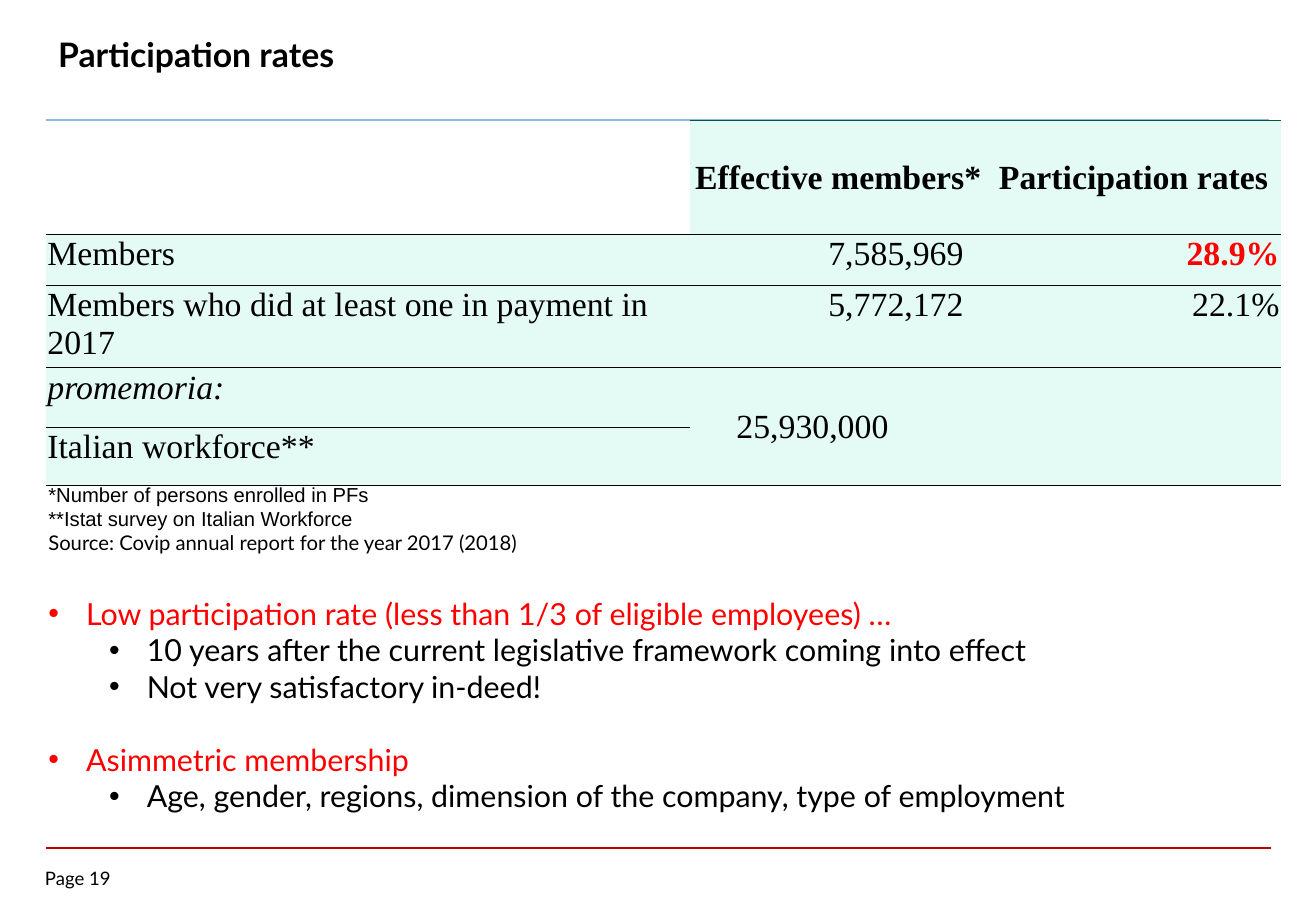
from typing import NamedTuple

import lxml.etree
import pptx
import pptx.dml.color
import pptx.enum.shapes
import pptx.enum.text
import pptx.oxml.ns
import pptx.util

Inches = pptx.util.Inches
Pt = pptx.util.Pt
Align = pptx.enum.text.PP_ALIGN
Anchor = pptx.enum.text.MSO_ANCHOR
qn = pptx.oxml.ns.qn

BLACK, RED, MINT = "000000", "FF0000", "E4FAF4"
LATO, TIMES = "Lato", "Times New Roman"
PLAIN = "{2D5ABB26-0587-4C30-8999-92F81FD0307C}"


class Rule(NamedTuple):
    top: float
    end: float
    color: str
    width: float


class Item(NamedTuple):
    text: str
    level: int = 0
    gap: float = 0


class Cell(NamedTuple):
    row: int
    col: int
    text: str
    align: Align = Align.LEFT
    anchor: Anchor = Anchor.TOP
    left: float = 0.01
    right: float = 0.01
    color: str = BLACK
    bold: bool = False
    italic: bool = False


RULES = [Rule(6.98, 10.46, "C00000", 1), Rule(0.99, 10.44, "8EB4E3", 1.5)]

HEAD = dict(align=Align.CENTER, anchor=Anchor.MIDDLE, bold=True)
COUNT = dict(align=Align.RIGHT, right=0.19)
CELLS = [
    Cell(0, 1, "Effective members*", **HEAD),
    Cell(0, 2, "Participation rates", **HEAD),
    Cell(1, 0, "Members"),
    Cell(1, 1, "7,585,969", **COUNT),
    Cell(1, 2, "28.9%", Align.RIGHT, color=RED, bold=True),
    Cell(2, 0, "Members who did at least one in payment in 2017"),
    Cell(2, 1, "5,772,172", **COUNT),
    Cell(2, 2, "22.1%", Align.RIGHT),
    Cell(3, 0, "promemoria:", italic=True),
    Cell(3, 1, "25,930,000", anchor=Anchor.MIDDLE, left=0.38),
    Cell(4, 0, "Italian workforce**"),
]

NOTES = [
    ("*Number of persons enrolled in PFs", "Arial"),
    ("**Istat survey on Italian Workforce", "Arial"),
    ("Source: Covip annual report for the year 2017 (2018)", LATO),
]

ITEMS = [
    Item("Low participation rate (less than 1/3 of eligible employees) …"),
    Item("10 years after the current legislative framework coming into effect", 1),
    Item("Not very satisfactory in-deed!", 1),
    Item("Asimmetric membership", gap=21.6),
    Item("Age, gender, regions, dimension of the company, type of employment", 1),
]


def rgb(color: str) -> pptx.dml.color.RGBColor:
    return pptx.dml.color.RGBColor.from_string(color)


def write(frame, text: str, *, size: float, font: str = LATO, color: str = BLACK,
          bold: bool = False, italic: bool = False, align: Align = Align.LEFT,
          gap: float = 0, level: int = 0, bullet: bool = False) -> None:
    para = frame.paragraphs[0]
    if para.runs:
        para = frame.add_paragraph()
    para.alignment = align
    para.level = level
    if gap:
        para.space_before = Pt(gap)
    if bullet:
        props = para._p.get_or_add_pPr()
        props.set("marL", str(Inches(0.31 + 0.5 * level)))
        props.set("indent", str(Inches(-0.31)))
        lxml.etree.SubElement(props, qn("a:buFont"), typeface="Arial")
        lxml.etree.SubElement(props, qn("a:buChar"), char="•")
    run = para.add_run()
    run.text = text
    face = run.font
    face.name, face.size = font, Pt(size)
    face.bold, face.italic = bold, italic
    face.color.rgb = rgb(color)


def add_box(slide, left: float, top: float, width: float, height: float,
            anchor: Anchor = Anchor.TOP):
    box = slide.shapes.add_textbox(*map(Inches, (left, top, width, height)))
    frame = box.text_frame
    frame.word_wrap = True
    frame.vertical_anchor = anchor
    return frame


def add_rule(slide, rule: Rule) -> None:
    line = slide.shapes.add_connector(
        pptx.enum.shapes.MSO_CONNECTOR.STRAIGHT,
        Inches(0.38), Inches(rule.top), Inches(rule.end), Inches(rule.top))
    line.line.color.rgb = rgb(rule.color)
    line.line.width = Pt(rule.width)
    lxml.etree.SubElement(line._element.spPr, qn("a:effectLst"))


def add_edges(cell, edges: dict[str, str]) -> None:
    props = cell._tc.get_or_add_tcPr()
    for spot, (side, color) in enumerate(edges.items()):
        line = lxml.etree.Element(qn(f"a:ln{side}"), w=str(Pt(0.5)))
        fill = lxml.etree.SubElement(line, qn("a:solidFill"))
        lxml.etree.SubElement(fill, qn("a:srgbClr"), val=color)
        props.insert(spot, line)


def style_cell(cell, row: int, col: int) -> None:
    if (row, col) == (0, 0):
        cell.fill.background()
    else:
        cell.fill.solid()
        cell.fill.fore_color.rgb = rgb(MINT)
    edges = {}
    if row == 0 and col:
        edges["T"] = "0D543E"
    elif row in (1, 3):
        edges["T"] = BLACK
    if row in (0, 2, 4) or cell.is_merge_origin:
        edges["B"] = BLACK
    add_edges(cell, edges)


def add_rates(slide) -> None:
    widths, heights = [5.3, 2.44, 2.42], [0.94, 0.42, 0.45, 0.49, 0.48]
    frame = slide.shapes.add_table(
        len(heights), len(widths), Inches(0.38), Inches(0.99),
        Inches(sum(widths)), Inches(sum(heights)))
    table = frame.table
    table.first_row = table.horz_banding = False
    table._tbl.tblPr.find(qn("a:tableStyleId")).text = PLAIN
    for col, width in zip(table.columns, widths):
        col.width = Inches(width)
    for row, height in zip(table.rows, heights):
        row.height = Inches(height)
    table.cell(3, 1).merge(table.cell(4, 2))
    for row in range(len(heights)):
        for col in range(len(widths)):
            style_cell(table.cell(row, col), row, col)
    for item in CELLS:
        cell = table.cell(item.row, item.col)
        cell.margin_left, cell.margin_right = Inches(item.left), Inches(item.right)
        cell.margin_top, cell.margin_bottom = Inches(0.01), 0
        cell.vertical_anchor = item.anchor
        write(cell.text_frame, item.text, size=20, font=TIMES, color=item.color,
              bold=item.bold, italic=item.italic, align=item.align)


def main() -> None:
    deck = pptx.Presentation()
    deck.slide_width, deck.slide_height = Inches(10.83), Inches(7.5)
    slide = deck.slides.add_slide(deck.slide_layouts[6])
    for rule in RULES:
        add_rule(slide, rule)

    page = add_box(slide, 0.37, 7.14, 0.73, 0.22)
    page.margin_left = page.margin_right = page.margin_top = page.margin_bottom = 0
    write(page, "Page 19", size=11)

    title = add_box(slide, 0.38, 0.09, 9.92, 0.71, Anchor.MIDDLE)
    write(title, "Participation rates", size=20, bold=True)

    add_rates(slide)

    notes = add_box(slide, 0.3, 3.92, 10.16, 0.71)
    for text, font in NOTES:
        write(notes, text, size=12, font=font)

    points = add_box(slide, 0.3, 4.85, 9.92, 2.22)
    for item in ITEMS:
        write(points, item.text, size=18, color=BLACK if item.level else RED,
              gap=item.gap, level=item.level, bullet=True)

    deck.save("out.pptx")


if __name__ == "__main__":
    main()
